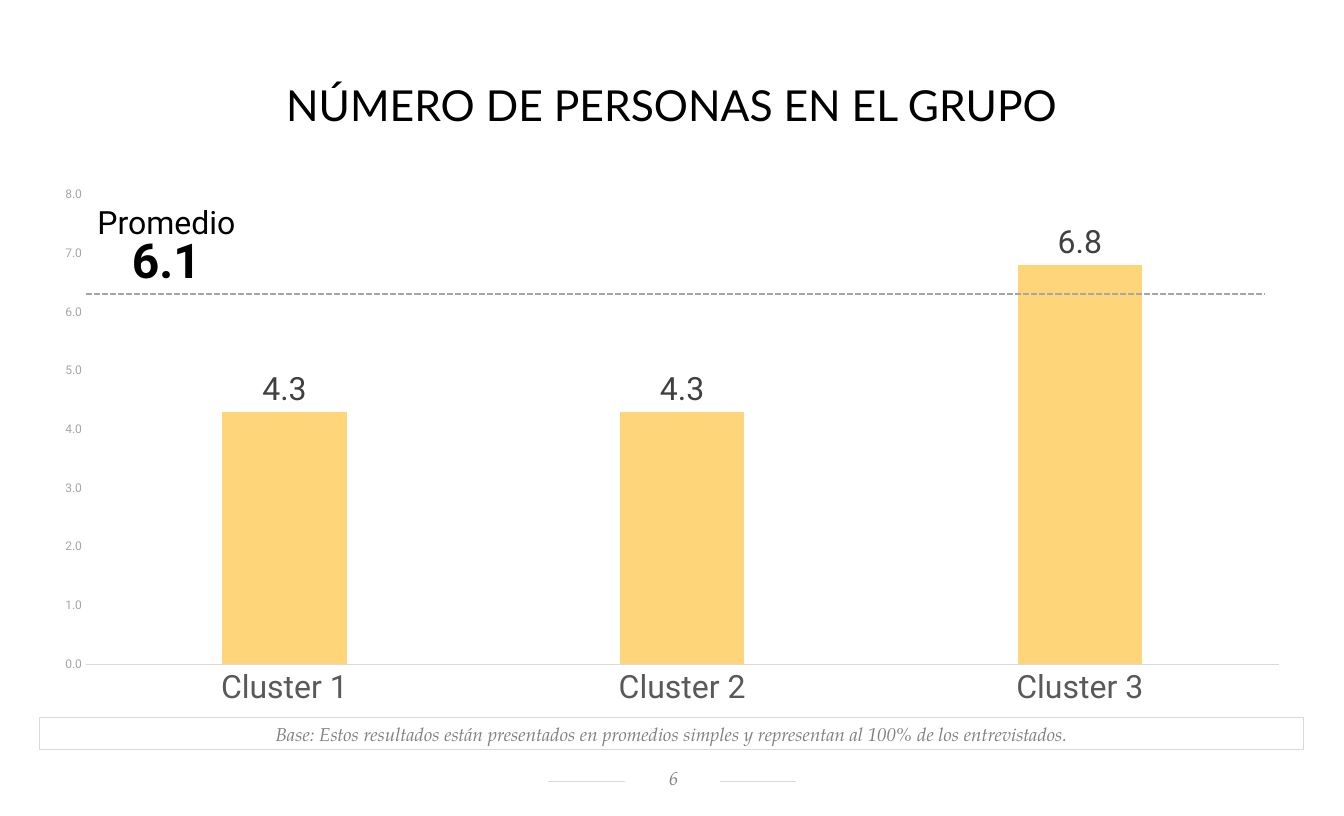
import pptx
import pptx.chart.data
import pptx.dml.color
import pptx.enum.chart
import pptx.enum.dml
import pptx.enum.shapes
import pptx.enum.text
import pptx.oxml.ns
import pptx.util
import lxml.etree

# Content
TITLE = "NÚMERO DE PERSONAS EN EL GRUPO"
MEAN = ("Promedio", "6.1")
NOTE = ("Base: Estos resultados están presentados en promedios simples "
        "y representan al 100% de los entrevistados.")
PAGE = "6"
CATS = ["Cluster 1", "Cluster 2", "Cluster 3"]
VALS = [4.3, 4.3, 6.8]


class Theme:
    black, white = "000000", "FFFFFF"
    bar, rule, dash = "FFD579", "D9D9D9", "A6A6A6"
    note, label, cat = "808080", "404040", "595959"
    head, body, serif = "Lato", "Roboto", "TeX Gyre Pagella"
    big, title, mid, small, tick = 36, 32, 24, 14, 9


# Page and grid, in px
WIDE, HIGH = 1344, 816
EDGE = 40
SPAN = WIDE - 2 * EDGE
AXIS = 86
NOTE_TOP = 717
CHART_TOP = 177
MEAN_Y = 294
FOOT_Y = 781

ALIGN = pptx.enum.text.PP_ALIGN
ANCHOR = pptx.enum.text.MSO_ANCHOR
FIT = pptx.enum.text.MSO_AUTO_SIZE


def px(n):
    return pptx.util.Emu(n * 9525)


def rgb(code):
    return pptx.dml.color.RGBColor.from_string(code)


def style(font, face, size, color, bold=False, italic=False):
    font.name, font.size = face, pptx.util.Pt(size)
    font.bold, font.italic = bold, italic
    font.color.rgb = rgb(color)


def write(shape, lines, anchor, pads=(10, 5, 10, 5), space=None):
    """Fill a shape with centred lines of (text, font settings)."""
    frame = shape.text_frame
    frame.word_wrap, frame.auto_size = True, FIT.NONE
    frame.vertical_anchor = anchor
    (frame.margin_left, frame.margin_top,
     frame.margin_right, frame.margin_bottom) = map(px, pads)
    for i, (text, look) in enumerate(lines):
        para = frame.add_paragraph() if i else frame.paragraphs[0]
        para.text, para.alignment = text, ALIGN.CENTER
        para.line_spacing = space
        style(para.font, *look)


def box(slide, area, line=None):
    shape = slide.shapes.add_shape(
        pptx.enum.shapes.MSO_SHAPE.RECTANGLE, *map(px, area))
    shape.shadow.inherit = False
    shape.fill.solid()
    shape.fill.fore_color.rgb = rgb(Theme.white)
    if line:
        shape.line.color.rgb = rgb(line)
        shape.line.width = pptx.util.Pt(0.75)
    else:
        shape.line.fill.background()
    return shape


def rule(slide, left, right, y, color, width):
    line = slide.shapes.add_connector(
        pptx.enum.shapes.MSO_CONNECTOR.STRAIGHT,
        px(left), px(y), px(right), px(y))
    line.line.color.rgb = rgb(color)
    line.line.width = pptx.util.Pt(width)
    lxml.etree.SubElement(line._element.spPr,
                          pptx.oxml.ns.qn("a:effectLst"))
    return line


def columns(slide):
    data = pptx.chart.data.CategoryChartData(number_format="0.0")
    data.categories = CATS
    data.add_series("Series 1", VALS)
    kinds = pptx.enum.chart
    chart = slide.shapes.add_chart(
        kinds.XL_CHART_TYPE.COLUMN_CLUSTERED, px(EDGE), px(CHART_TOP),
        px(SPAN), px(NOTE_TOP - CHART_TOP), data).chart
    chart.has_legend = chart.has_title = False
    style(chart.font, Theme.body, Theme.tick, Theme.dash)

    # Bars and their values
    plot = chart.plots[0]
    plot.gap_width, plot.overlap = 219, -27
    plot.vary_by_categories = False
    fill = plot.series[0].format.fill
    fill.solid()
    fill.fore_color.rgb = rgb(Theme.bar)
    plot.has_data_labels = True
    tags = plot.data_labels
    tags.show_value = True
    tags.number_format, tags.number_format_is_linked = "0.0", False
    tags.position = kinds.XL_LABEL_POSITION.OUTSIDE_END
    style(tags.font, Theme.body, Theme.mid, Theme.label)

    # Axes
    cat, val = chart.category_axis, chart.value_axis
    for axis in (cat, val):
        axis.major_tick_mark = kinds.XL_TICK_MARK.NONE
        axis.minor_tick_mark = kinds.XL_TICK_MARK.NONE
        axis.has_major_gridlines = False
    style(cat.tick_labels.font, Theme.body, Theme.mid, Theme.cat)
    cat.format.line.color.rgb = rgb(Theme.rule)
    cat.format.line.width = pptx.util.Pt(0.75)
    style(val.tick_labels.font, Theme.body, Theme.tick, Theme.dash)
    val.tick_labels.number_format = "0.0"
    val.tick_labels.number_format_is_linked = False
    val.minimum_scale, val.maximum_scale, val.major_unit = 0, 8, 1
    val.format.line.fill.background()


def main():
    deck = pptx.Presentation()
    deck.slide_width, deck.slide_height = px(WIDE), px(HIGH)
    slide = deck.slides.add_slide(deck.slide_layouts[5])
    faint = (Theme.serif, Theme.small, Theme.note, False, True)

    # Title
    title = slide.shapes.title
    title.left, title.top, title.width, title.height = map(
        px, (0, 82, WIDE, 54))
    write(title, [(TITLE, (Theme.head, Theme.title, Theme.black))],
          ANCHOR.TOP, (13, 7, 13, 7), 0.8)

    # Page number over a split rule
    rule(slide, 548, 796, FOOT_Y, Theme.rule, 0.5)
    write(box(slide, (625, 766, 95, 28)), [(PAGE, faint)],
          ANCHOR.MIDDLE, (12, 2, 10, 5))

    # Base note
    write(box(slide, (EDGE, NOTE_TOP, SPAN, 33), Theme.rule),
          [(NOTE, faint)], ANCHOR.BOTTOM)

    columns(slide)

    # Mean line and label
    mean = rule(slide, AXIS, WIDE - EDGE - EDGE, MEAN_Y, Theme.dash, 1.5)
    mean.line.dash_style = pptx.enum.dml.MSO_LINE.SQUARE_DOT
    label = slide.shapes.add_textbox(*map(px, (AXIS, 205, 161, 88)))
    looks = [(Theme.body, Theme.mid, Theme.black),
             (Theme.body, Theme.big, Theme.black, True)]
    write(label, list(zip(MEAN, looks)), ANCHOR.TOP, space=0.81)

    deck.save("out.pptx")


if __name__ == "__main__":
    main()
